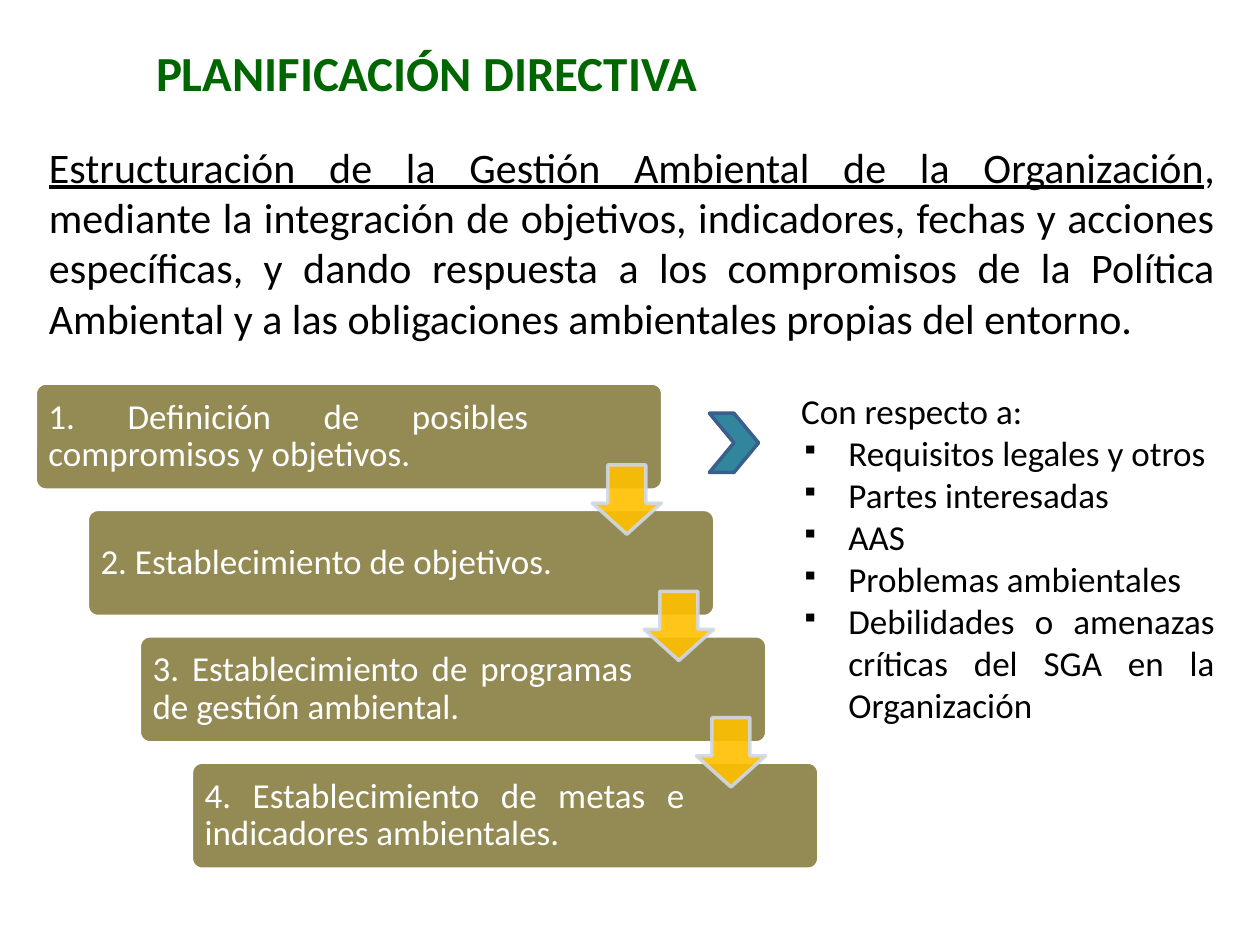
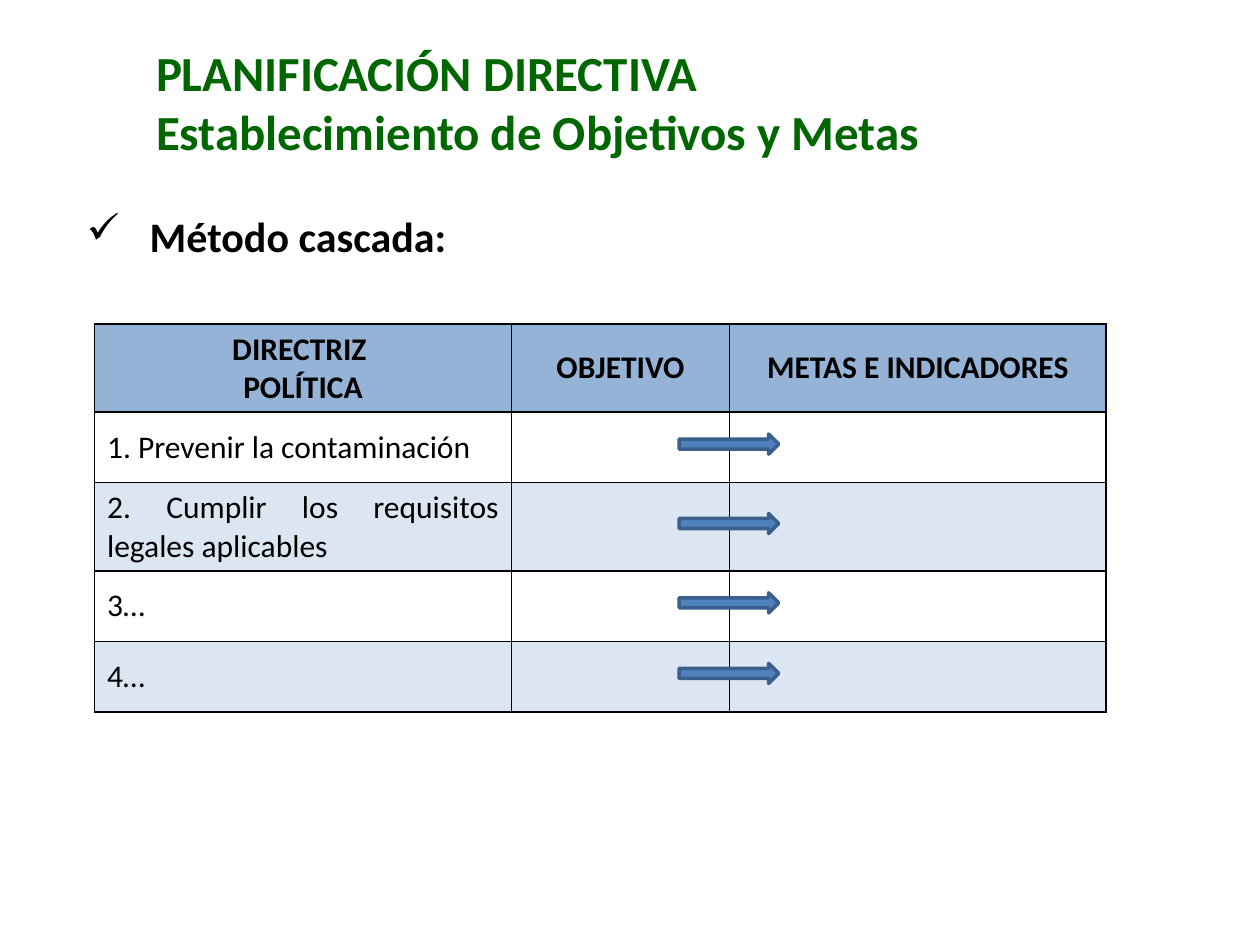
from lxml import etree
from pptx import Presentation
from pptx.dml.color import RGBColor
from pptx.enum.shapes import MSO_SHAPE as Preset
from pptx.enum.text import MSO_ANCHOR as Anchor, PP_ALIGN as Align
from pptx.oxml.ns import qn
from pptx.util import Inches, Pt

COLUMNS, ROWS = 100, 75
SLIDE_WIDTH, SLIDE_HEIGHT = Inches(10), Inches(7.5)
FONT = "Calibri"
COLORS = {
    "title": "006600", "text": "000000", "white": "FFFFFF",
    "step": "948A54", "step_arrow": "FFC000", "step_arrow_line": "D0D8E8",
    "chevron": "31859C", "arrow": "4F81BD", "arrow_line": "3A5F8C",
    "header": "95B3D7", "band": "DCE6F2",
}

STEPS = [
    "1. Definición de posibles compromisos y objetivos.",
    "2. Establecimiento de objetivos.",
    "3. Establecimiento de programas de gestión ambiental.",
    "4. Establecimiento de metas e indicadores ambientales.",
]
TOPICS = [
    "Requisitos legales y otros",
    "Partes interesadas",
    "AAS",
    "Problemas ambientales",
    "Debilidades o amenazas críticas del SGA en la Organización",
]
HEADERS = [["DIRECTRIZ ", "POLÍTICA"], ["OBJETIVO"], ["METAS E INDICADORES"]]
GUIDELINES = [
    "1. Prevenir la contaminación",
    "2. Cumplir los requisitos legales aplicables",
    "3…",
    "4…",
]


def rgb(name):
    return RGBColor.from_string(COLORS[name])


def across(columns):
    return round(SLIDE_WIDTH * columns / COLUMNS)


def down(rows):
    return round(SLIDE_HEIGHT * rows / ROWS)


def place(left, top, width, height):
    """Turn grid columns and rows into lengths on the slide."""
    return across(left), down(top), across(width), down(height)


def add_run(paragraph, text, size, color="text", bold=False, underline=False):
    run = paragraph.add_run()
    run.text = text
    font = run.font
    font.name, font.size, font.bold = FONT, Pt(size), bold
    font.underline = underline
    font.color.rgb = rgb(color)


def add_paragraph(frame, align=Align.JUSTIFY):
    """Use the empty first paragraph of the frame, or append one."""
    first = frame.paragraphs[0]
    paragraph = frame.add_paragraph() if first.runs else first
    paragraph.alignment = align
    return paragraph


def set_bullet(paragraph, symbol, indent, percent=100):
    properties = paragraph._p.get_or_add_pPr()
    properties.set("marL", str(across(indent)))
    properties.set("indent", str(-across(indent)))
    etree.SubElement(properties, qn("a:buSzPct"), val=str(percent * 1000))
    etree.SubElement(properties, qn("a:buChar"), char=symbol)


def add_text_frame(slide, *box):
    frame = slide.shapes.add_textbox(*place(*box)).text_frame
    frame.word_wrap = True
    return frame


def add_title(slide, *lines):
    frame = add_text_frame(slide, 11.4, 2.9, 86, 10.4)
    for line in lines:
        add_run(add_paragraph(frame, Align.LEFT), line, 28, "title", bold=True)


def add_preset(slide, preset, box, fill, line, adjustments=()):
    shape = slide.shapes.add_shape(preset, *place(*box))
    shape.shadow.inherit = False
    shape.fill.solid()
    shape.fill.fore_color.rgb = rgb(fill)
    shape.line.color.rgb = rgb(line)
    shape.line.width = Pt(2)
    for index, value in enumerate(adjustments):
        shape.adjustments[index] = value
    return shape


def set_opacity(shape, percent):
    """Apply the opacity to both the fill and the line."""
    for color in shape._element.spPr.iter(qn("a:srgbClr")):
        etree.SubElement(color, qn("a:alpha"), val=str(percent * 1000))


def add_step(slide, text, left, top):
    card = add_preset(slide, Preset.ROUNDED_RECTANGLE, (left, top, 49.8, 8.5),
                      "step", "white", [0.1])
    frame = card.text_frame
    frame.word_wrap = True
    frame.vertical_anchor = Anchor.MIDDLE
    frame.margin_left = frame.margin_top = frame.margin_bottom = across(0.8)
    frame.margin_right = across(10.4)
    paragraph = add_paragraph(frame)
    paragraph.line_spacing = 0.9
    add_run(paragraph, text, 20, "white")


def add_staircase(slide):
    left, top, step_right, step_down = 2.8, 30.4, 4.13, 10.03
    offsets = [(i * step_right, i * step_down) for i in range(len(STEPS))]
    for text, (right, below) in zip(STEPS, offsets):
        add_step(slide, text, left + right, top + below)
    for right, below in offsets[:-1]:
        box = (left + 44.2 + right, top + 6.5 + below, 5.5, 5.5)
        arrow = add_preset(slide, Preset.DOWN_ARROW, box, "step_arrow",
                           "step_arrow_line", [0.55, 0.45])
        set_opacity(arrow, 90)


def add_topics(slide):
    frame = add_text_frame(slide, 62.6, 30.4, 34.8, 27.9)
    add_run(add_paragraph(frame), "Con respecto a:", 20)
    for topic in TOPICS:
        paragraph = add_paragraph(frame)
        set_bullet(paragraph, "▪", 3.75, 70)
        add_run(paragraph, topic, 20)


def set_borders(cell):
    properties = cell._tc.get_or_add_tcPr()
    for index, side in enumerate(("a:lnL", "a:lnR", "a:lnT", "a:lnB")):
        line = etree.Element(qn(side), w=str(Pt(1)))
        fill = etree.SubElement(line, qn("a:solidFill"))
        etree.SubElement(fill, qn("a:srgbClr"), val=COLORS["text"])
        properties.insert(index, line)


def fill_cell(cell, lines, align, fill=None, bold=False):
    if fill:
        cell.fill.solid()
        cell.fill.fore_color.rgb = rgb(fill)
    else:
        cell.fill.background()
    set_borders(cell)
    cell.vertical_anchor = Anchor.MIDDLE
    for line in lines:
        add_run(add_paragraph(cell.text_frame, align), line, 18, bold=bold)


def add_cascade_table(slide):
    left, top = 7.5, 25.7
    widths, heights = [33.1, 17.3, 29.9], [7, 5.6, 7, 5.6, 5.6]
    box = place(left, top, sum(widths), sum(heights))
    table = slide.shapes.add_table(len(heights), len(widths), *box).table
    table.first_row = table.horz_banding = False
    for column, width in zip(table.columns, widths):
        column.width = across(width)
    for row, height in zip(table.rows, heights):
        row.height = down(height)

    for column, lines in enumerate(HEADERS):
        fill_cell(table.cell(0, column), lines, Align.CENTER, "header", True)
    for row, guideline in enumerate(GUIDELINES, start=1):
        fill = "band" if row % 2 == 0 else None
        for column, lines in enumerate([[guideline], [], []]):
            fill_cell(table.cell(row, column), lines, Align.JUSTIFY, fill)

    arrow_height = 1.6
    for row in range(1, len(heights)):
        middle = top + sum(heights[:row]) + heights[row] / 2 - 0.25
        box = (53.9, middle - arrow_height / 2, 7.9, arrow_height)
        add_preset(slide, Preset.RIGHT_ARROW, box, "arrow", "arrow_line")


def build_planning_slide(slide):
    add_title(slide, "PLANIFICACIÓN DIRECTIVA")
    paragraph = add_paragraph(add_text_frame(slide, 2.9, 10.7, 94.5, 17.2))
    add_run(paragraph, "Estructuración de la Gestión Ambiental de la Organización",
            24, underline=True)
    add_run(paragraph, ", mediante la integración de objetivos, indicadores, fechas "
            "y acciones específicas, y dando respuesta a los compromisos de la "
            "Política Ambiental y a las obligaciones ambientales propias del "
            "entorno.", 24)
    add_staircase(slide)
    add_preset(slide, Preset.CHEVRON, (56.3, 32.8, 3.9, 4.7), "chevron", "arrow_line")
    add_topics(slide)


def build_cascade_slide(slide):
    add_title(slide, "PLANIFICACIÓN DIRECTIVA",
              "Establecimiento de Objetivos y Metas")
    paragraph = add_paragraph(add_text_frame(slide, 5.9, 16.2, 89, 6.7))
    set_bullet(paragraph, "✓", 5)
    add_run(paragraph, "Método cascada:", 24, bold=True)
    add_cascade_table(slide)


def main():
    presentation = Presentation()
    presentation.slide_width = SLIDE_WIDTH
    presentation.slide_height = SLIDE_HEIGHT
    blank = presentation.slide_layouts[6]
    for build in (build_planning_slide, build_cascade_slide):
        build(presentation.slides.add_slide(blank))
    presentation.save("out.pptx")


if __name__ == "__main__":
    main()
